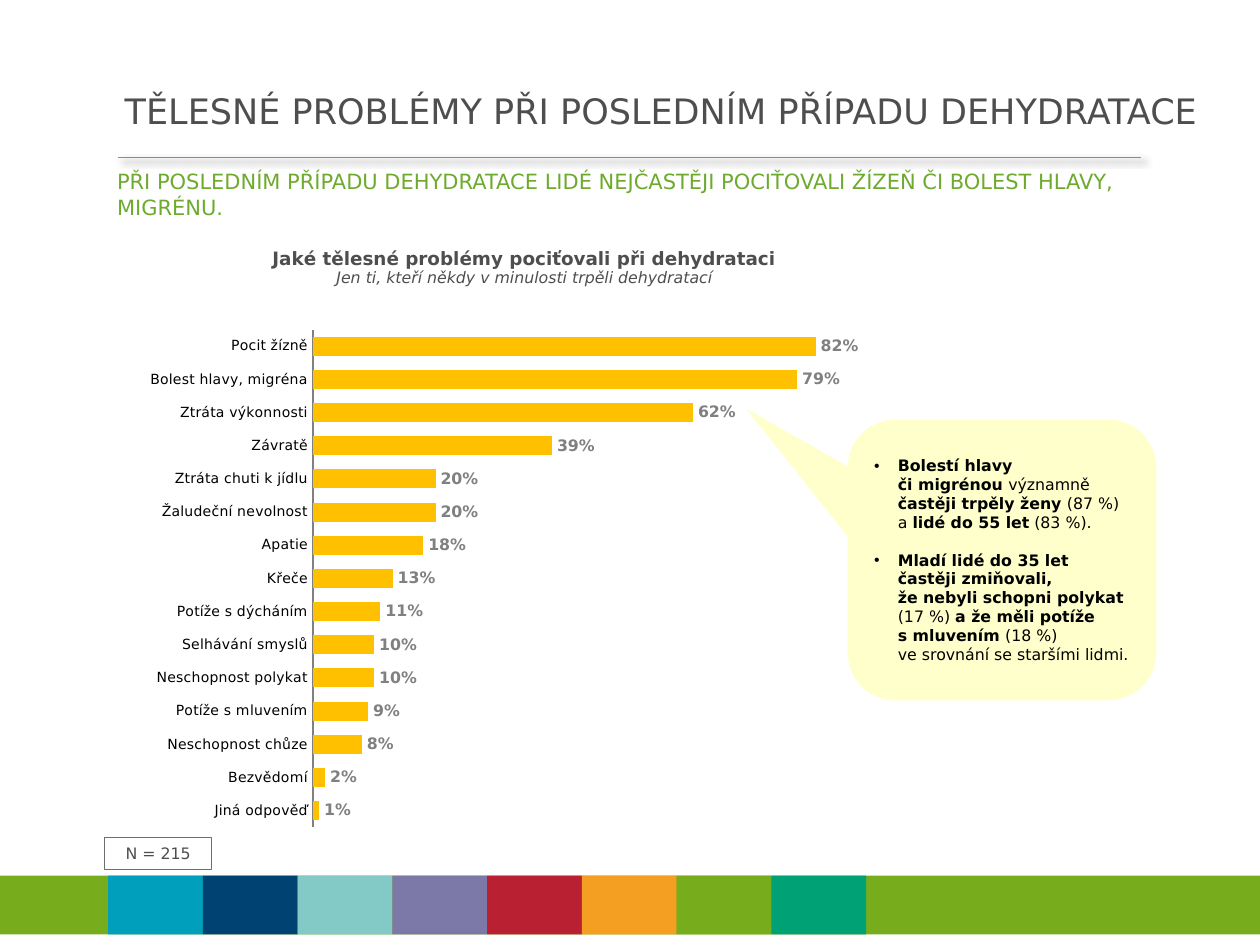
import pptx
import pptx.chart.data
import pptx.dml.color
import pptx.enum.chart
import pptx.enum.shapes
import pptx.enum.text
import pptx.oxml
import pptx.oxml.ns
import pptx.util
from lxml import etree

Cm, Pt = pptx.util.Cm, pptx.util.Pt
RGBColor = pptx.dml.color.RGBColor
SHAPE = pptx.enum.shapes.MSO_SHAPE
ALIGN = pptx.enum.text.PP_ALIGN
ANCHOR = pptx.enum.text.MSO_ANCHOR
qn = pptx.oxml.ns.qn

FONT = "DejaVu Sans"
BLACK = RGBColor(0x00, 0x00, 0x00)
DARK = RGBColor(0x4E, 0x4E, 0x4E)
BORDER = RGBColor(0x6E, 0x6E, 0x6E)
GREY = RGBColor(0x80, 0x80, 0x80)
GREEN = RGBColor(0x77, 0xAD, 0x1C)
LEAD_GREEN = RGBColor(0x6E, 0xAA, 0x2E)
AMBER = RGBColor(0xFF, 0xC0, 0x00)
CREAM = RGBColor(0xFF, 0xFF, 0xCC)
BAND = [RGBColor.from_string(c) for c in (
    "009FBB", "004272", "83C9C6", "7C78A8", "B92032", "F49F22", "77AD1C", "00A275")]

TITLE = "TĚLESNÉ PROBLÉMY PŘI POSLEDNÍM PŘÍPADU DEHYDRATACE"
LEAD = ("PŘI POSLEDNÍM PŘÍPADU DEHYDRATACE LIDÉ NEJČASTĚJI POCIŤOVALI "
        "ŽÍZEŇ ČI BOLEST HLAVY, MIGRÉNU.")
SAMPLE = "N = 215"
CHART_TITLE = "Jaké tělesné problémy pociťovali při dehydrataci"
CHART_NOTE = "Jen ti, kteří někdy v minulosti trpěli dehydratací"
PROBLEMS = [
    ("Pocit žízně", 0.82), ("Bolest hlavy, migréna", 0.79),
    ("Ztráta výkonnosti", 0.62), ("Závratě", 0.39),
    ("Ztráta chuti k jídlu", 0.20), ("Žaludeční nevolnost", 0.20),
    ("Apatie", 0.18), ("Křeče", 0.13), ("Potíže s dýcháním", 0.11),
    ("Selhávání smyslů", 0.10), ("Neschopnost polykat", 0.10),
    ("Potíže s mluvením", 0.09), ("Neschopnost chůze", 0.08),
    ("Bezvědomí", 0.02), ("Jiná odpověď", 0.01),
]
FINDINGS = [
    [("Bolestí hlavy \nči migrénou ", True), ("významně", False),
     (" častěji trpěly ženy ", True), ("(87 %) a ", False),
     ("lidé do 55 let", True), (" (83 %).", False)],
    [("Mladí lidé do 35 let častěji zmiňovali, \nže nebyli schopni polykat ", True),
     ("(17 %) ", False), ("a že měli potíže \ns mluvením ", True),
     ("(18 %) \nve srovnání se staršími lidmi.", False)],
]


def style(font, size, color, bold=False, italic=False):
    font.name, font.size, font.bold, font.italic = FONT, Pt(size), bold, italic
    font.color.rgb = color


def add_run(p, text, size, color, bold=False, italic=False):
    for i, part in enumerate(text.split("\n")):
        if i:
            p.add_line_break()
        r = p.add_run()
        r.text = part
        style(r.font, size, color, bold, italic)


def add_box(slide, kind, left, top, width, height, fill=None, line=None):
    sp = slide.shapes.add_shape(kind, Cm(left), Cm(top), Cm(width), Cm(height))
    sp.shadow.inherit = False
    if fill is None:
        sp.fill.background()
    else:
        sp.fill.solid()
        sp.fill.fore_color.rgb = fill
    if line is None:
        sp.line.fill.background()
    else:
        sp.line.color.rgb = line
        sp.line.width = Pt(0.75)
    return sp


def set_layout(parent, index, **values):
    for old in parent.findall(qn("c:layout")):
        parent.remove(old)
    layout = etree.Element(qn("c:layout"))
    manual = etree.SubElement(layout, qn("c:manualLayout"))
    for tag, val in values.items():
        etree.SubElement(manual, qn("c:" + tag)).set("val", str(val))
    parent.insert(index, layout)


def add_rule(slide):
    ln = slide.shapes.add_connector(
        pptx.enum.shapes.MSO_CONNECTOR.STRAIGHT, Cm(2.38), Cm(3.17), Cm(23.01), Cm(3.17))
    ln.line.color.rgb = GREEN
    ln.line.width = Pt(0.75)
    effects = etree.SubElement(ln._element.spPr, qn("a:effectLst"))
    shadow = etree.SubElement(effects, qn("a:outerShdw"), blurRad=str(Pt(4)),
                              dist=str(Pt(3)), dir="2700000", rotWithShape="0")
    color = etree.SubElement(shadow, qn("a:srgbClr"), val="000000")
    etree.SubElement(color, qn("a:alpha"), val="40000")


def add_problem_chart(slide):
    data = pptx.chart.data.CategoryChartData(number_format="0%")
    data.categories = [name for name, share in PROBLEMS]
    data.add_series("Series 1", [share for name, share in PROBLEMS])
    chart = slide.shapes.add_chart(
        pptx.enum.chart.XL_CHART_TYPE.BAR_CLUSTERED,
        Cm(0), Cm(4.88), Cm(18.67), Cm(12.62), data).chart
    style(chart.font, 9, BLACK)
    chart.has_legend = False
    chart.has_title = True
    tf = chart.chart_title.text_frame
    add_run(tf.paragraphs[0], CHART_TITLE, 10.5, DARK, bold=True)
    add_run(tf.add_paragraph(), CHART_NOTE, 9, DARK, italic=True)
    set_layout(chart.chart_title._element, 1, xMode="edge", yMode="edge", x=0.29, y=0)
    set_layout(chart._chartSpace.chart.plotArea, 0, layoutTarget="inner", xMode="edge",
               yMode="edge", x=0.338, y=0.14, w=0.662, h=0.795)

    tick = pptx.enum.chart.XL_TICK_MARK.NONE
    cat = chart.category_axis
    cat.reverse_order = True
    cat.major_tick_mark = cat.minor_tick_mark = tick
    cat.format.line.color.rgb = GREY
    cat.format.line.width = Pt(0.75)
    style(cat.tick_labels.font, 8, BLACK)
    val = chart.value_axis
    val.minimum_scale, val.maximum_scale = 0, 1
    val.has_major_gridlines = False
    val.visible = False

    plot = chart.plots[0]
    plot.gap_width = 75
    plot.vary_by_categories = False
    fill = plot.series[0].format.fill
    fill.solid()
    fill.fore_color.rgb = AMBER
    plot.has_data_labels = True
    labels = plot.data_labels
    labels.show_value = True
    labels.number_format = "0%"
    labels.number_format_is_linked = False
    labels.position = pptx.enum.chart.XL_LABEL_POSITION.OUTSIDE_END
    style(labels.font, 9, GREY, bold=True)


def add_findings(slide):
    sp = add_box(slide, SHAPE.ROUNDED_RECTANGULAR_CALLOUT, 17.09, 8.46, 6.22, 5.66, CREAM)
    for i, adj in enumerate((-0.83, -0.54, 0.17)):
        sp.adjustments[i] = adj
    tf = sp.text_frame
    tf.word_wrap = True
    tf.vertical_anchor = ANCHOR.MIDDLE
    for i, runs in enumerate(FINDINGS):
        p = tf.add_paragraph() if i else tf.paragraphs[0]
        p.alignment = ALIGN.LEFT
        if i:
            p.space_before = Pt(10.5)
        pPr = p._p.get_or_add_pPr()
        pPr.set("marL", str(Cm(0.48)))
        pPr.set("indent", str(Cm(-0.48)))
        etree.SubElement(pPr, qn("a:buFont"), typeface="Arial")
        etree.SubElement(pPr, qn("a:buChar"), char="•")
        for text, bold in runs:
            add_run(p, text, 9, BLACK, bold)


def main():
    prs = pptx.Presentation()
    prs.slide_width, prs.slide_height = Cm(25.4), Cm(19.05)
    slide = prs.slides.add_slide(prs.slide_layouts[5])

    add_rule(slide)
    add_box(slide, SHAPE.RECTANGLE, 0, 17.65, 25.4, 1.19, GREEN)
    for i, color in enumerate(BAND):
        add_box(slide, SHAPE.RECTANGLE, 2.18 + 1.91 * i, 17.65, 1.91, 1.19, color)

    title = slide.shapes.title
    title.left, title.top, title.width, title.height = Cm(2.26), Cm(1.57), Cm(22.53), Cm(1.3)
    tf = title.text_frame
    tf.auto_size = pptx.enum.text.MSO_AUTO_SIZE.NONE
    tf.vertical_anchor = ANCHOR.MIDDLE
    tf.paragraphs[0].alignment = ALIGN.LEFT
    add_run(tf.paragraphs[0], TITLE, 20, DARK)

    tf = slide.shapes.add_textbox(Cm(2.11), Cm(3.28), Cm(21.21), Cm(1.4)).text_frame
    tf.word_wrap = True
    add_run(tf.paragraphs[0], LEAD, 12, LEAD_GREEN)

    sp = add_box(slide, SHAPE.RECTANGLE, 2.11, 16.89, 2.16, 0.64, line=BORDER)
    p = sp.text_frame.paragraphs[0]
    p.alignment = ALIGN.CENTER
    add_run(p, SAMPLE, 9, DARK)

    add_problem_chart(slide)
    add_findings(slide)
    prs.save("out.pptx")


if __name__ == "__main__":
    main()
